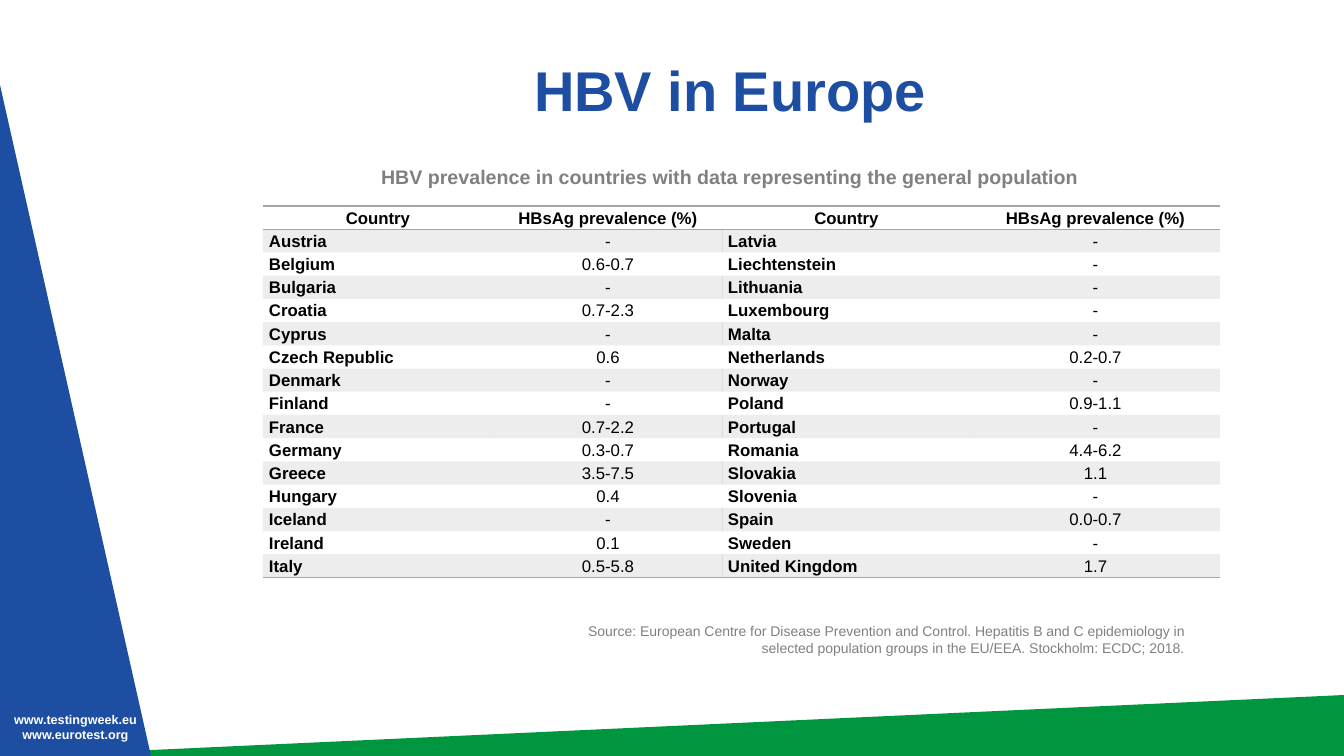
from lxml import etree
from pptx import Presentation
from pptx.dml.color import RGBColor
from pptx.enum.shapes import MSO_SHAPE
from pptx.enum.text import MSO_ANCHOR, MSO_AUTO_SIZE, PP_ALIGN
from pptx.oxml.ns import qn
from pptx.util import Pt

PX = 914400 / 100.8
BLUE = RGBColor(0x1D, 0x4E, 0xA2)
GREEN = RGBColor(0x00, 0x96, 0x40)
GREY = RGBColor(0x80, 0x80, 0x80)
RULE_GREY = RGBColor(0xA5, 0xA5, 0xA5)
BLACK = RGBColor(0, 0, 0)
WHITE = RGBColor(0xFF, 0xFF, 0xFF)

TRIANGLE = MSO_SHAPE.RIGHT_TRIANGLE
LEFT, CENTER, RIGHT = PP_ALIGN.LEFT, PP_ALIGN.CENTER, PP_ALIGN.RIGHT
MIDDLE, TOP = MSO_ANCHOR.MIDDLE, MSO_ANCHOR.TOP
NO_FIT = MSO_AUTO_SIZE.NONE

HEADINGS = ("Country", "HBsAg prevalence (%)")
COUNTRIES_A_TO_I = [
    ("Austria", "-"), ("Belgium", "0.6-0.7"), ("Bulgaria", "-"),
    ("Croatia", "0.7-2.3"), ("Cyprus", "-"), ("Czech Republic", "0.6"),
    ("Denmark", "-"), ("Finland", "-"), ("France", "0.7-2.2"),
    ("Germany", "0.3-0.7"), ("Greece", "3.5-7.5"), ("Hungary", "0.4"),
    ("Iceland", "-"), ("Ireland", "0.1"), ("Italy", "0.5-5.8"),
]
COUNTRIES_L_TO_U = [
    ("Latvia", "-"), ("Liechtenstein", "-"), ("Lithuania", "-"),
    ("Luxembourg", "-"), ("Malta", "-"), ("Netherlands", "0.2-0.7"),
    ("Norway", "-"), ("Poland", "0.9-1.1"), ("Portugal", "-"),
    ("Romania", "4.4-6.2"), ("Slovakia", "1.1"), ("Slovenia", "-"),
    ("Spain", "0.0-0.7"), ("Sweden", "-"), ("United Kingdom", "1.7"),
]


def px(length):
    return round(length * PX)


def set_all(target, values):
    for name, value in values.items():
        setattr(target, name, value)


def place(shape, left, top, width, height):
    set_all(shape, {"left": px(left), "top": px(top),
                    "width": px(width), "height": px(height)})


def format_para(para, size, color, bold, **layout):
    set_all(para, layout)
    set_all(para.font, {"name": "Arial", "size": Pt(size), "bold": bold})
    para.font.color.rgb = color


def add_triangle(slide, color, left, top, width, height, rotation=0):
    triangle = slide.shapes.add_shape(TRIANGLE, 0, 0, 0, 0)
    place(triangle, left, top, width, height)
    triangle.rotation = rotation
    triangle.shadow.inherit = False
    triangle.fill.solid()
    triangle.fill.fore_color.rgb = color
    triangle.line.fill.background()


def add_text(slide, lines, frame, size, color, bold, align):
    box = slide.shapes.add_textbox(0, 0, 0, 0)
    place(box, *frame)
    box.text_frame.word_wrap = True
    box.text_frame.text = "\n".join(lines)
    for para in box.text_frame.paragraphs:
        format_para(para, size, color, bold, alignment=align)


def fill_placeholder(holder, text, frame, anchor, size, color, **layout):
    place(holder, *frame)
    set_all(holder.text_frame, {"text": text, "word_wrap": True,
                                "auto_size": NO_FIT, "vertical_anchor": anchor})
    para = holder.text_frame.paragraphs[0]
    properties = para._p.get_or_add_pPr()
    properties.set("marL", "0")
    properties.set("indent", "0")
    etree.SubElement(properties, qn("a:buNone"))
    format_para(para, size, color, True, alignment=CENTER,
                space_before=Pt(0), **layout)


def set_borders(cell, ruled_sides):
    properties = cell._tc.get_or_add_tcPr()
    for index, side in enumerate("LRTB"):
        line = etree.Element(qn(f"a:ln{side}"), w=str(Pt(1)))
        if side in ruled_sides:
            paint = etree.SubElement(line, qn("a:solidFill"))
            etree.SubElement(paint, qn("a:srgbClr"), val=str(RULE_GREY))
        else:
            etree.SubElement(line, qn("a:noFill"))
        properties.insert(index, line)


def shade(cell, is_band):
    if not is_band:
        cell.fill.background()
        return
    cell.fill.solid()
    cell.fill.fore_color.rgb = RULE_GREY
    tint = cell._tc.tcPr.find(".//" + qn("a:srgbClr"))
    etree.SubElement(tint, qn("a:alpha"), val="20000")


def add_prevalence_table(slide, countries, left, column_width):
    rows = [HEADINGS] + countries
    last = len(rows) - 1
    height = 372
    frame = slide.shapes.add_table(len(rows), 2, px(left), px(206),
                                   px(2 * column_width), px(height))
    table = frame.table
    set_all(table, {"first_row": False, "horz_banding": False})
    for row_index, values in enumerate(rows):
        table.rows[row_index].height = px(height / len(rows))
        ruled_sides = ("T" if row_index in (0, 1) else "") + (
            "B" if row_index in (0, last) else "")
        for column_index, value in enumerate(values):
            cell = table.cell(row_index, column_index)
            set_all(cell, {"text": value, "margin_left": px(6), "margin_right": px(6),
                           "margin_top": 0, "margin_bottom": 0})
            is_name = column_index == 0
            is_heading = row_index == 0
            format_para(cell.text_frame.paragraphs[0], 12, BLACK,
                        is_heading or is_name,
                        alignment=LEFT if is_name and not is_heading else CENTER,
                        line_spacing=1.15, space_after=Pt(2))
            shade(cell, row_index % 2 == 1)
            set_borders(cell, ruled_sides)


def main():
    deck = Presentation()
    set_all(deck, {"slide_width": px(1344), "slide_height": px(756)})
    slide = deck.slides.add_slide(deck.slide_layouts[1])
    title, subtitle = slide.placeholders

    # Corner wedges and web addresses
    add_triangle(slide, GREEN, 641, 54, 62, 1344, rotation=270)
    add_triangle(slide, BLUE, 0, 85, 151, 671)
    add_text(slide, ["www.testingweek.eu", "www.eurotest.org"],
             (-8, 707, 167, 40), 9, WHITE, True, CENTER)

    # Title and table heading
    fill_placeholder(title, "HBV in Europe", (208, 40, 1044, 107),
                     MIDDLE, 40, BLUE, line_spacing=0.9)
    fill_placeholder(
        subtitle,
        "HBV prevalence in countries with data representing the general population",
        (208, 160, 1044, 45), TOP, 14, GREY, level=1, space_after=Pt(6))

    # Source line
    add_text(slide, ["Source: European Centre for Disease Prevention and Control. "
                     "Hepatitis B and C epidemiology in selected population groups "
                     "in the EU/EEA. Stockholm: ECDC; 2018."],
             (549, 618, 645, 44), 10, GREY, False, RIGHT)

    # Two tables side by side
    add_prevalence_table(slide, COUNTRIES_A_TO_I, 263, 230)
    add_prevalence_table(slide, COUNTRIES_L_TO_U, 722, 249)

    deck.save("out.pptx")


if __name__ == "__main__":
    main()
